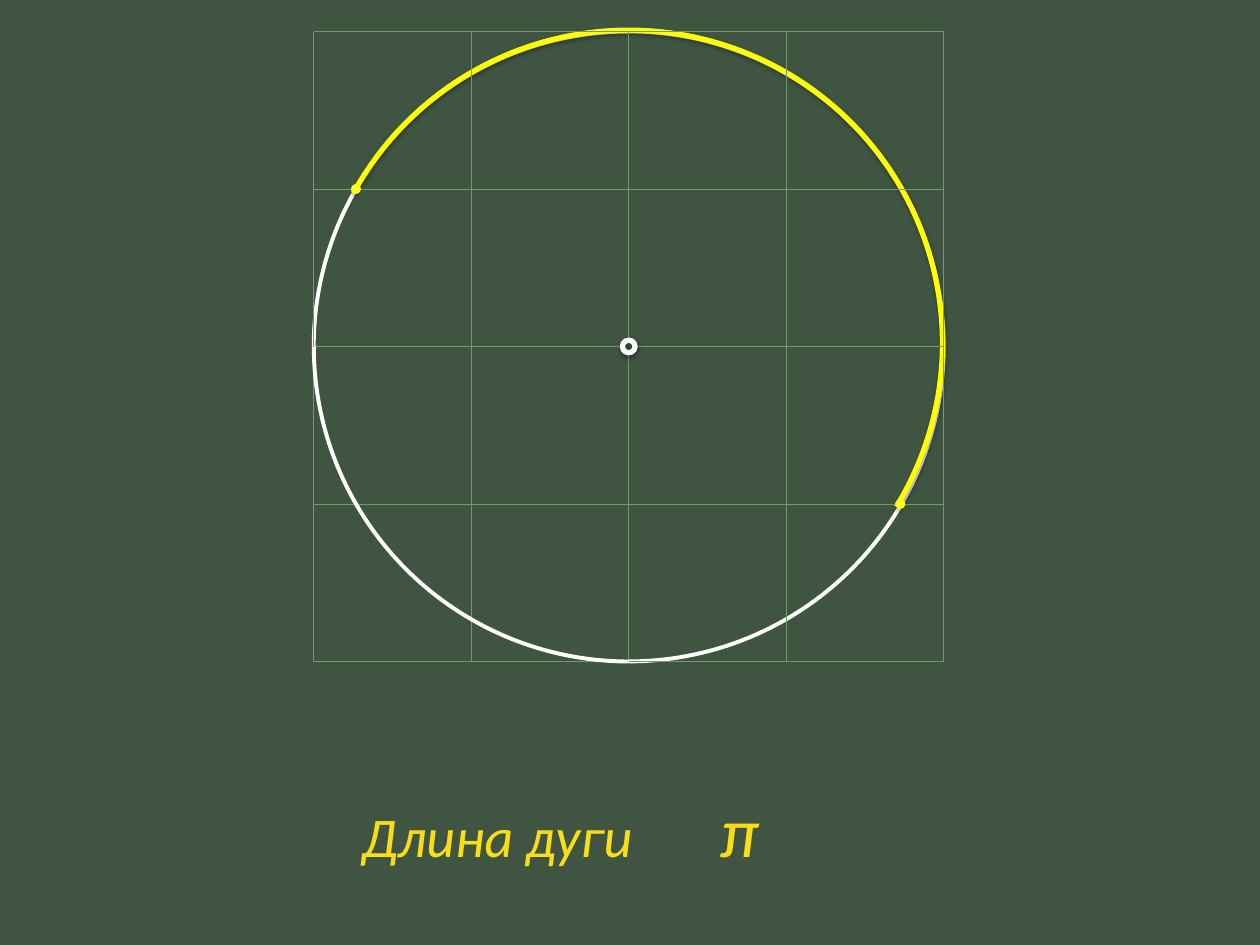
from lxml.etree import SubElement
from pptx import Presentation
from pptx.dml.color import RGBColor
from pptx.enum.dml import MSO_LINE
from pptx.enum.shapes import MSO_CONNECTOR, MSO_SHAPE
from pptx.enum.text import MSO_ANCHOR, MSO_AUTO_SIZE, PP_ALIGN
from pptx.oxml.ns import qn
from pptx.util import Inches, Pt

COLORS = {"board": "405541", "grid": "709B6D", "chalk": "FFFFFF",
          "arc": "FFFF00", "text": "F9DE17", "hub": "314630", "shade": "000000"}
WIDE, HIGH = 10, 7.5
CELLS = 4


def color(name):
    return RGBColor.from_string(COLORS[name])


def shade(shape):
    effects = shape._element.spPr.find(qn("a:effectLst"))
    outer = SubElement(effects, qn("a:outerShdw"), blurRad=str(Pt(3.1)),
                       dist=str(Pt(1.6)), dir="5400000", rotWithShape="0")
    tone = SubElement(outer, qn("a:srgbClr"), val=COLORS["shade"])
    SubElement(tone, qn("a:alpha"), val="38000")


def draw(slide, kind, box, line, width, fill=None):
    shape = slide.shapes.add_shape(kind, *map(Inches, box))
    shape.shadow.inherit = False
    if fill:
        shape.fill.solid()
        shape.fill.fore_color.rgb = color(fill)
    else:
        shape.fill.background()
    shape.line.color.rgb = color(line)
    shape.line.width = Pt(width)
    return shape


def dot(slide, x, y, size, line, width, fill):
    box = (x - size / 2, y - size / 2, size, size)
    return draw(slide, MSO_SHAPE.OVAL, box, line, width, fill)


def rule(slide, start, end):
    line = slide.shapes.add_connector(
        MSO_CONNECTOR.STRAIGHT, *map(Inches, (*start, *end)))
    line.line.color.rgb = color("grid")
    line.line.width = Pt(0.25)
    line.line.dash_style = MSO_LINE.ROUND_DOT
    SubElement(line._element.spPr, qn("a:effectLst"))


def grid(slide, box):
    left, top, width, height = box
    for i in range(CELLS + 1):
        x, y = left + width * i / CELLS, top + height * i / CELLS
        rule(slide, (left, y), (left + width, y))
        rule(slide, (x, top), (x, top + height))


def circle(slide, box):
    left, top, width, height = box

    def quarter(turn):
        draw(slide, MSO_SHAPE.ARC, box, "chalk", 2.25).rotation = turn

    for turn in (90, 270, 0):
        quarter(turn)
    arc = draw(slide, MSO_SHAPE.ARC,
               (left + 0.01, top - 0.01, width - 0.02, height - 0.03), "arc", 3)
    arc.adjustments[0], arc.adjustments[1] = 125.185, 18.847
    shade(arc)
    grid(slide, box)
    quarter(180)
    for x, row in ((0.931, 3), (0.067, 1)):
        dot(slide, left + width * x, top + height * row / CELLS,
            0.05, "arc", 2, "chalk")
    shade(dot(slide, left + width / 2, top + height / 2, 0.1, "chalk", 3, "hub"))


def label(slide, box, text, size):
    frame = slide.shapes.add_textbox(*map(Inches, box)).text_frame
    para = frame.paragraphs[0]
    para.text = text
    font = para.font
    font.name, font.size, font.italic = "Calibri", Pt(size), True
    font.color.rgb = color("text")
    return frame


def caption(slide, box):
    left, top, width, height = box
    title = label(slide, (left, top, width * 0.95, height), "Длина дуги", 32)
    title.word_wrap = True
    title.vertical_anchor = MSO_ANCHOR.BOTTOM
    title.paragraphs[0].alignment = PP_ALIGN.CENTER
    sign = label(slide, (left + width * 0.877, top + 0.04, 0.51, 0.77), "π", 40)
    sign.word_wrap = False
    sign.auto_size = MSO_AUTO_SIZE.SHAPE_TO_FIT_TEXT


def main():
    deck = Presentation()
    deck.slide_width, deck.slide_height = Inches(WIDE), Inches(HIGH)
    slide = deck.slides.add_slide(deck.slide_layouts[6])
    back = slide.background.fill
    back.solid()
    back.fore_color.rgb = color("board")
    circle(slide, (WIDE * 0.249, HIGH / 30, WIDE / 2, WIDE / 2))
    caption(slide, (WIDE * 0.197, HIGH * 0.821, WIDE * 0.416, HIGH * 0.105))
    deck.save("out.pptx")


if __name__ == "__main__":
    main()
